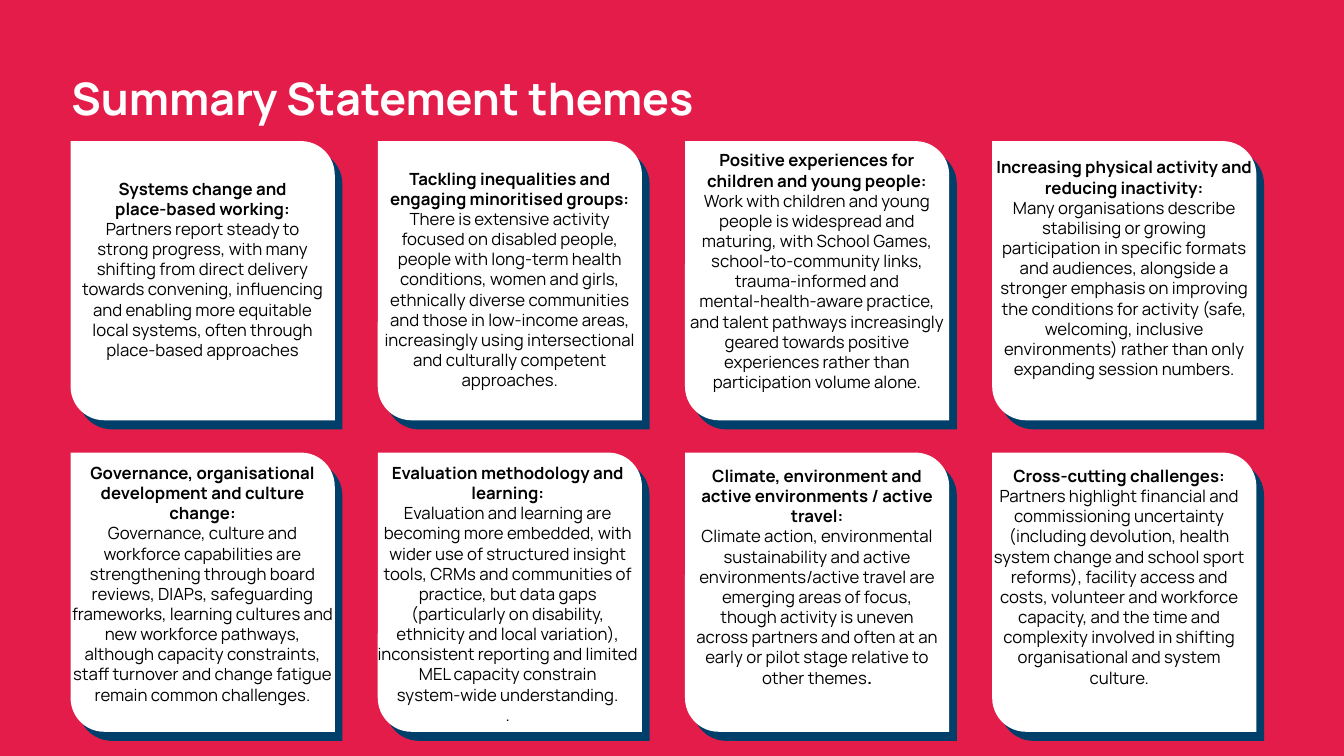
import pptx
import pptx.util
import pptx.dml.color
import pptx.enum.shapes
import pptx.enum.text
from dataclasses import dataclass
from lxml import etree
from pptx.oxml.ns import qn
from pptx.util import Inches, Pt

TITLE = "Summary Statement themes"

# Heading, body paragraphs, text width, text top below card top, shift from card centre
THEMES = [
    ("Systems change and place‑based working:",
     ["Partners report steady to strong progress, with many shifting from direct delivery towards "
      "convening, influencing and enabling more equitable local systems, often through "
      "place‑based approaches"], 2.62, 0.32, 0),
    ("Tackling inequalities and engaging minoritised groups:",
     ["There is extensive activity focused on disabled people, people with long‑term health "
      "conditions, women and girls, ethnically diverse communities and those in low‑income areas, "
      "increasingly using intersectional and culturally competent approaches."], 2.8, 0.22, 0),
    ("Positive experiences for children and young people:",
     ["Work with children and young people is widespread and maturing, with School Games, "
      "school‑to‑community links, trauma‑informed and mental‑health‑aware practice, and talent "
      "pathways increasingly geared towards positive experiences rather than participation "
      "volume alone."], 2.8, 0.04, 0),
    ("Increasing physical activity and reducing inactivity:",
     ["Many organisations describe stabilising or growing participation in specific formats and "
      "audiences, alongside a stronger emphasis on improving the conditions for activity (safe, "
      "welcoming, inclusive environments) rather than only expanding session numbers."],
     2.8, 0.11, 0),
    ("Governance, organisational development and culture change:",
     ["Governance, culture and workforce capabilities are strengthening through board reviews, "
      "DIAPs, safeguarding frameworks, learning cultures and new workforce pathways, although "
      "capacity constraints, staff turnover and change fatigue remain common challenges."],
     2.8, 0.05, 0),
    ("Evaluation methodology and learning:",
     ["Evaluation and learning are becoming more embedded, with wider use of structured insight "
      "tools, CRMs and communities of practice, but data gaps (particularly on disability, "
      "ethnicity and local variation), inconsistent reporting and limited MEL capacity constrain "
      "system‑wide understanding.", "."], 2.8, 0.05, -0.02),
    ("Climate, environment and active environments / active travel:",
     ["Climate action, environmental sustainability and active environments/active travel are "
      "emerging areas of focus, though activity is uneven across partners and often at an early "
      "or pilot stage relative to other themes**."], 2.62, 0.08, 0),
    ("Cross‑cutting challenges:",
     ["Partners highlight financial and commissioning uncertainty (including devolution, health "
      "system change and school sport reforms), facility access and costs, volunteer and "
      "workforce capacity, and the time and complexity involved in shifting organisational and "
      "system culture."], 2.71, 0.08, -0.05),
]


@dataclass(frozen=True)
class Theme:
    font: str = "Manrope"
    background: str = "E31C4A"
    card: str = "FFFFFF"
    shadow: str = "003F69"
    title: str = "FFFFFF"
    text: str = "000000"
    title_size: int = 32
    text_size: int = 12


LOOK = Theme()
SLIDE_W, SLIDE_H = 13.33, 7.5
COLUMNS = 4
GRID_LEFT, GRID_TOP = 0.7, 1.4
COL_STEP, ROW_STEP = 3.047, 3.09
CARD_W, CARD_H = 2.62, 2.77
CORNER = 0.128


def rgb(value):
    return pptx.dml.color.RGBColor.from_string(value)


def add_run(p, text, size, color, bold):
    r = p.add_run()
    r.text = text
    r.font.name, r.font.size, r.font.bold = LOOK.font, Pt(size), bold
    r.font.color.rgb = rgb(color)


def add_box(s, left, top, width, height):
    tf = s.shapes.add_textbox(Inches(left), Inches(top), Inches(width), Inches(height)).text_frame
    tf.word_wrap = True
    return tf


def add_hard_shadow(sp):
    """Give the card a solid, unblurred shadow towards the lower right."""
    sp.shadow.inherit = False
    effects = sp._element.spPr.find(qn("a:effectLst"))
    shadow = etree.SubElement(effects, qn("a:outerShdw"), blurRad="0", dist=str(Pt(8.5)),
                              dir=str(50 * 60000), algn="tl", rotWithShape="0")
    etree.SubElement(shadow, qn("a:srgbClr"), val=LOOK.shadow)


def add_card(s, left, top):
    sp = s.shapes.add_shape(pptx.enum.shapes.MSO_SHAPE.ROUND_2_DIAG_RECTANGLE,
                            Inches(left), Inches(top), Inches(CARD_W), Inches(CARD_H))
    sp.adjustments[0], sp.adjustments[1] = 0, CORNER
    sp.fill.solid()
    sp.fill.fore_color.rgb = rgb(LOOK.card)
    sp.line.fill.background()
    add_hard_shadow(sp)


def add_theme_text(tf, heading, body):
    """Write a bold heading and its body; text after ** is bold."""
    p = tf.paragraphs[0]
    p.alignment = pptx.enum.text.PP_ALIGN.CENTER
    add_run(p, heading, LOOK.text_size, LOOK.text, True)
    for paragraph in body:
        p = tf.add_paragraph()
        p.alignment = pptx.enum.text.PP_ALIGN.CENTER
        for i, part in enumerate(paragraph.split("**")):
            add_run(p, part, LOOK.text_size, LOOK.text, i > 0)


def main():
    prs = pptx.Presentation()
    prs.slide_width, prs.slide_height = Inches(SLIDE_W), Inches(SLIDE_H)
    s = prs.slides.add_slide(prs.slide_layouts[6])
    s.background.fill.solid()
    s.background.fill.fore_color.rgb = rgb(LOOK.background)

    tf = add_box(s, 0.61, 0.65, 10.65, 0.64)
    tf.vertical_anchor = pptx.enum.text.MSO_ANCHOR.MIDDLE
    add_run(tf.paragraphs[0], TITLE, LOOK.title_size, LOOK.title, True)

    for i, (heading, body, width, drop, shift) in enumerate(THEMES):
        row, col = divmod(i, COLUMNS)
        left, top = GRID_LEFT + col * COL_STEP, GRID_TOP + row * ROW_STEP
        add_card(s, left, top)
        text_left = left + (CARD_W - width) / 2 + shift
        add_theme_text(add_box(s, text_left, top + drop, width, CARD_H - drop), heading, body)

    prs.save("out.pptx")


if __name__ == "__main__":
    main()
